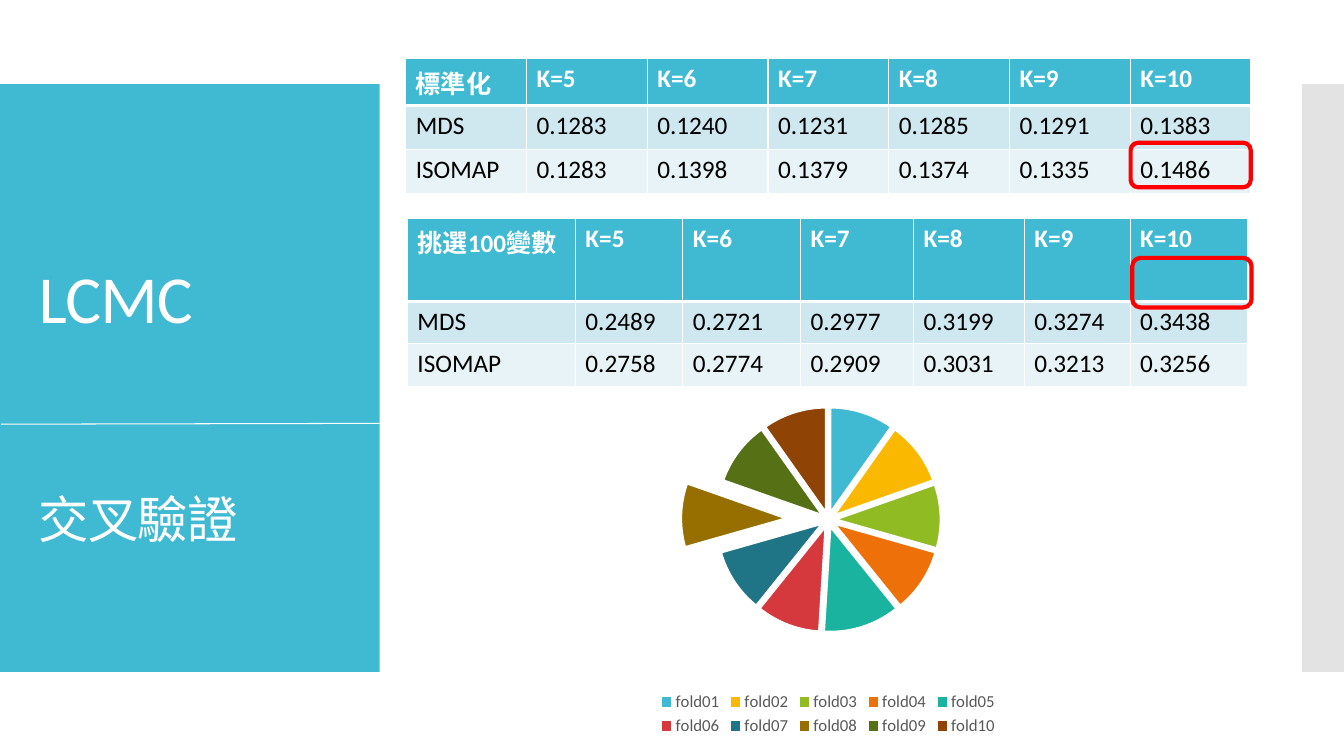
from lxml.etree import SubElement
from pptx import Presentation
from pptx.chart.data import CategoryChartData
from pptx.dml.color import RGBColor
from pptx.enum.chart import XL_CHART_TYPE, XL_LEGEND_POSITION
from pptx.enum.shapes import MSO_CONNECTOR, MSO_SHAPE
from pptx.enum.text import MSO_ANCHOR, PP_ALIGN
from pptx.oxml.ns import qn
from pptx.util import Inches, Pt

COLORS = {
    "white": "FFFFFF", "black": "000000", "teal": "40BAD2", "gray": "C8C8C8",
    "band_dark": "CFE7EE", "band_light": "E8F3F7", "red": "FF0000", "legend": "595959",
}
FOLD_COLORS = {
    "fold01": "40BAD2", "fold02": "FAB900", "fold03": "90BB23", "fold04": "EE7008",
    "fold05": "1AB39F", "fold06": "D5393D", "fold07": "1F7485", "fold08": "966F00",
    "fold09": "567015", "fold10": "8F4305",
}
FONT = "Calibri"


def grid(*cells):
    return [Inches(cell / 12) for cell in cells]


def write(paragraph, text, size=18, color="white", bold=False, spacing=None):
    run = paragraph.add_run()
    run.text = text
    run.font.name = FONT
    run.font.size = Pt(size)
    run.font.bold = bold
    run.font.color.rgb = RGBColor.from_string(COLORS[color])
    if spacing is not None:
        run.font._element.set("spc", str(spacing))


presentation = Presentation()
presentation.slide_width, presentation.slide_height = grid(160, 90)
slide = presentation.slides.add_slide(presentation.slide_layouts[5])

for position, color, opacity in [((0, 10, 45.2, 70), "teal", 100), ((155, 10, 5, 70), "gray", 50)]:
    panel = slide.shapes.add_shape(MSO_SHAPE.RECTANGLE, *grid(*position))
    panel.shadow.inherit = False
    panel.fill.solid()
    panel.fill.fore_color.rgb = RGBColor.from_string(COLORS[color])
    panel.line.fill.background()
    if opacity < 100:
        fill_color = panel._element.spPr.find(qn("a:solidFill"))[0]
        SubElement(fill_color, qn("a:alpha"), val=str(opacity * 1000))

title = slide.shapes.title
slide.shapes._spTree.append(title._element)
title.left, title.top, title.width, title.height = grid(3.4, 14.8, 38.6, 61.9)
title.text_frame.word_wrap = True
title.text_frame.vertical_anchor = MSO_ANCHOR.TOP
title.text_frame.margin_top = Inches(1.4)
heading = title.text_frame.paragraphs[0]
subheading = title.text_frame.add_paragraph()
subheading.space_before = Pt(112)
for paragraph, text, size in [(heading, "LCMC", 48), (subheading, "交叉驗證", 36)]:
    paragraph.alignment = PP_ALIGN.LEFT
    paragraph.line_spacing = 0.9
    write(paragraph, text, size=size, spacing=-60)

neighbours = [f"K={k}" for k in range(5, 11)]
tables = [
    ((48.5, 26), [20, 12.8, 14, 13.45, 13.2, 12.6, 14], 5.05, [
        ["挑選100變數", *neighbours],
        ["MDS", "0.2489", "0.2721", "0.2977", "0.3199", "0.3274", "0.3438"],
        ["ISOMAP", "0.2758", "0.2774", "0.2909", "0.3031", "0.3213", "0.3256"],
    ]),
    ((48.3, 7), [14.38] * 7, 5.25, [
        ["標準化", *neighbours],
        ["MDS", "0.1283", "0.1240", "0.1231", "0.1285", "0.1291", "0.1383"],
        ["ISOMAP", "0.1283", "0.1398", "0.1379", "0.1374", "0.1335", "0.1486"],
    ]),
]
row_fills = ["teal", "band_dark", "band_light"]
for corner, widths, row_height, rows in tables:
    size = (sum(widths), row_height * len(rows))
    table = slide.shapes.add_table(len(rows), len(widths), *grid(*corner, *size)).table
    for column, width in zip(table.columns, grid(*widths)):
        column.width = width
    for row_index, values in enumerate(rows):
        table.rows[row_index].height = grid(row_height)[0]
        is_header = row_index == 0
        for column_index, value in enumerate(values):
            cell = table.cell(row_index, column_index)
            write(cell.text_frame.paragraphs[0], value, bold=is_header,
                  color="white" if is_header else "black")
            properties = cell._tc.get_or_add_tcPr()
            for side in ("lnL", "lnR", "lnT", "lnB"):
                thick = (is_header and side == "lnB") or (row_index == 1 and side == "lnT")
                border = SubElement(properties, qn(f"a:{side}"), w=str(Pt(3 if thick else 1)))
                border_fill = SubElement(border, qn("a:solidFill"))
                SubElement(border_fill, qn("a:srgbClr"), val=COLORS["white"])
            cell.fill.solid()
            cell.fill.fore_color.rgb = RGBColor.from_string(COLORS[row_fills[row_index]])

divider = slide.shapes.add_connector(MSO_CONNECTOR.STRAIGHT, *grid(0.1, 50.5, 45.2, 50.4))
divider.line.color.rgb = RGBColor.from_string(COLORS["white"])
divider.line.width = Pt(0.75)
SubElement(divider._element.spPr, qn("a:effectLst"))

for position in [(134.6, 17, 14.3, 5.3), (134.8, 30.7, 14.2, 5.9)]:
    highlight = slide.shapes.add_shape(MSO_SHAPE.ROUNDED_RECTANGLE, *grid(*position))
    highlight.shadow.inherit = False
    highlight.fill.background()
    highlight.line.color.rgb = RGBColor.from_string(COLORS["red"])
    highlight.line.width = Pt(3)

chart_data = CategoryChartData()
chart_data.categories = list(FOLD_COLORS)
chart_data.add_series("Series 1", [12 if fold == "fold05" else 10 for fold in FOLD_COLORS])
chart = slide.shapes.add_chart(XL_CHART_TYPE.PIE, *grid(60.4, 42.7, 76.4, 45.4), chart_data).chart
chart.has_title = False
chart.font.name = FONT
chart.font.size = Pt(10)
chart.has_legend = True
chart.legend.position = XL_LEGEND_POSITION.BOTTOM
chart.legend.include_in_layout = False
chart.legend.font.name = FONT
chart.legend.font.size = Pt(12)
chart.legend.font.color.rgb = RGBColor.from_string(COLORS["legend"])
folds = chart.plots[0].series[0]
for index, (fold, color) in enumerate(FOLD_COLORS.items()):
    slice_format = folds.points[index].format
    slice_format.fill.solid()
    slice_format.fill.fore_color.rgb = RGBColor.from_string(color)
    slice_format.line.color.rgb = RGBColor.from_string(COLORS["white"])
    slice_format.line.width = Pt(1.5)
for point, fold in zip(folds._element.findall(qn("c:dPt")), FOLD_COLORS):
    explosion = SubElement(point, qn("c:explosion"), val="40" if fold == "fold08" else "7")
    point.find(qn("c:spPr")).addprevious(explosion)

presentation.save("out.pptx")
